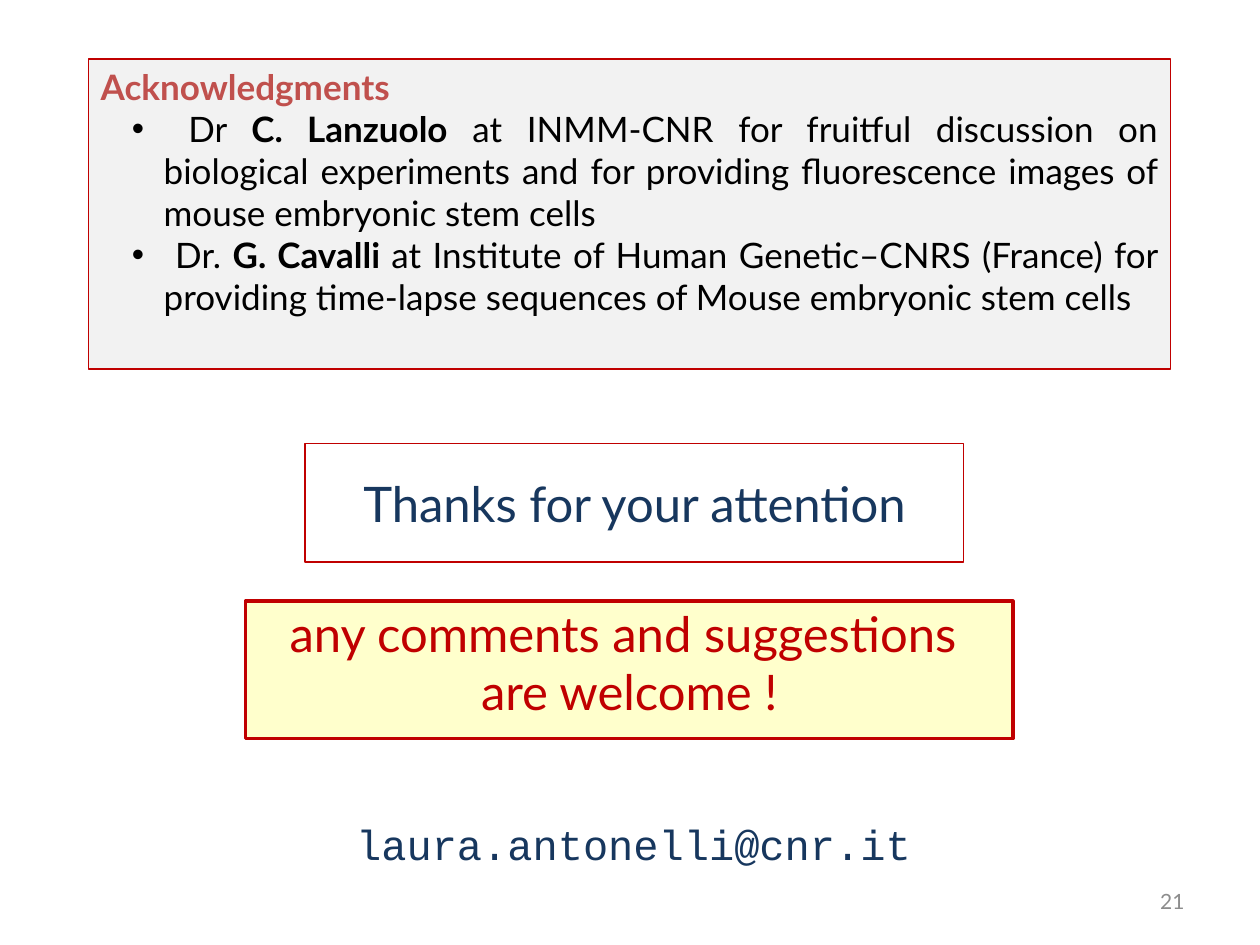
from dataclasses import dataclass
from typing import Optional

from lxml import etree
from pptx import Presentation
from pptx.dml.color import RGBColor
from pptx.enum.shapes import MSO_SHAPE
from pptx.enum.text import MSO_ANCHOR, PP_ALIGN
from pptx.oxml.ns import qn
from pptx.util import Cm, Pt

RECT = MSO_SHAPE.RECTANGLE
TOP, MIDDLE = MSO_ANCHOR.TOP, MSO_ANCHOR.MIDDLE
LEFT, CENTER, RIGHT, JUSTIFY = (
    PP_ALIGN.LEFT, PP_ALIGN.CENTER, PP_ALIGN.RIGHT, PP_ALIGN.JUSTIFY)

COLORS = {
    "navy": "17375E", "red": "C00000", "heading": "C0504D", "black": "000000",
    "number": "8C8C8C", "white": "FFFFFF", "panel": "F2F2F2", "yellow": "FFFFCC",
}
SANS, MONO = "Lato", "Courier New"


@dataclass
class Run:
    text: str
    color: str
    size: int
    font: str = SANS
    bold: bool = False


@dataclass
class Para:
    runs: list[Run]
    align: PP_ALIGN = CENTER
    bullet: bool = False


@dataclass
class Box:
    """A text block; left, top, width and height are in centimetres."""
    at: tuple[float, float, float, float]
    paras: list[Para]
    anchor: MSO_ANCHOR = MIDDLE
    fill: Optional[str] = None
    line: float = 0.75
    wrap: bool = True
    title: bool = False


def rgb(name: str) -> RGBColor:
    return RGBColor.from_string(COLORS[name])


def add_bullet(p) -> None:
    p.level = 1
    pPr = p._p.get_or_add_pPr()
    pPr.set("marL", str(Cm(1.27)))
    pPr.set("indent", str(-Cm(0.64)))
    etree.SubElement(pPr, qn("a:buFont")).set("typeface", "Arial")
    etree.SubElement(pPr, qn("a:buChar")).set("char", "•")


def write(tf, box: Box) -> None:
    tf.word_wrap, tf.vertical_anchor = box.wrap, box.anchor
    for i, para in enumerate(box.paras):
        p = tf.add_paragraph() if i else tf.paragraphs[0]
        p.alignment = para.align
        if para.bullet:
            add_bullet(p)
        for run in para.runs:
            r = p.add_run()
            r.text = run.text
            formats = {"name": run.font, "size": Pt(run.size), "bold": run.bold}
            for key, value in formats.items():
                setattr(r.font, key, value)
            r.font.color.rgb = rgb(run.color)


def draw(s, box: Box) -> None:
    at = [Cm(v) for v in box.at]
    if box.title:
        sp = s.shapes.title
        sp.left, sp.top, sp.width, sp.height = at
    elif box.fill:
        sp = s.shapes.add_shape(RECT, *at)
        sp.shadow.inherit = False
    else:
        sp = s.shapes.add_textbox(*at)
    if box.fill:
        sp.fill.solid()
        sp.fill.fore_color.rgb = rgb(box.fill)
        sp.line.color.rgb = rgb("red")
        sp.line.width = Pt(box.line)
    write(sp.text_frame, box)


def body(text: str, bold: bool = False) -> Run:
    return Run(text, "black", 20, bold=bold)


def thanks_bullet(greeting: str, name: str, reason: str) -> Para:
    return Para([body(greeting), body(name, True), body(reason)], JUSTIFY, True)


BOXES = [
    # Slide number
    Box((18.21, 17.65, 5.92, 1.02), [Para([Run("21", "number", 12)], RIGHT)]),
    # Closing title
    Box((6.15, 8.94, 13.28, 2.39),
        [Para([Run("Thanks for your attention", "navy", 28)])],
        fill="white", title=True),
    # Contact address
    Box((6.93, 16.38, 11.79, 1.27),
        [Para([Run("laura.antonelli@cnr.it", "navy", 24, MONO)], LEFT)],
        anchor=TOP, wrap=False),
    # Acknowledgments panel
    Box((1.78, 1.19, 21.82, 6.25), [
        Para([Run("Acknowledgments", "heading", 20, bold=True)], JUSTIFY),
        thanks_bullet(" Dr ", "C. Lanzuolo",
                      " at INMM-CNR for fruitful discussion on biological "
                      "experiments and for providing fluorescence images of "
                      "mouse embryonic stem cells "),
        thanks_bullet(" Dr. ", "G. Cavalli ",
                      "at Institute of Human Genetic–CNRS (France) for "
                      "providing time-lapse sequences of Mouse embryonic "
                      "stem cells "),
    ], anchor=TOP, fill="panel"),
    # Yellow invitation panel and its text
    Box((4.95, 12.12, 15.47, 2.77), [], fill="yellow", line=2),
    Box((4.95, 11.3, 15.47, 4.09),
        [Para([Run(text, "red", 28)])
         for text in ("any comments and suggestions ", "are welcome !")]),
]


def main() -> None:
    prs = Presentation()
    prs.slide_width, prs.slide_height = Cm(25.4), Cm(19.05)
    s = prs.slides.add_slide(prs.slide_layouts[5])
    for box in BOXES:
        draw(s, box)
    prs.save("out.pptx")


if __name__ == "__main__":
    main()
